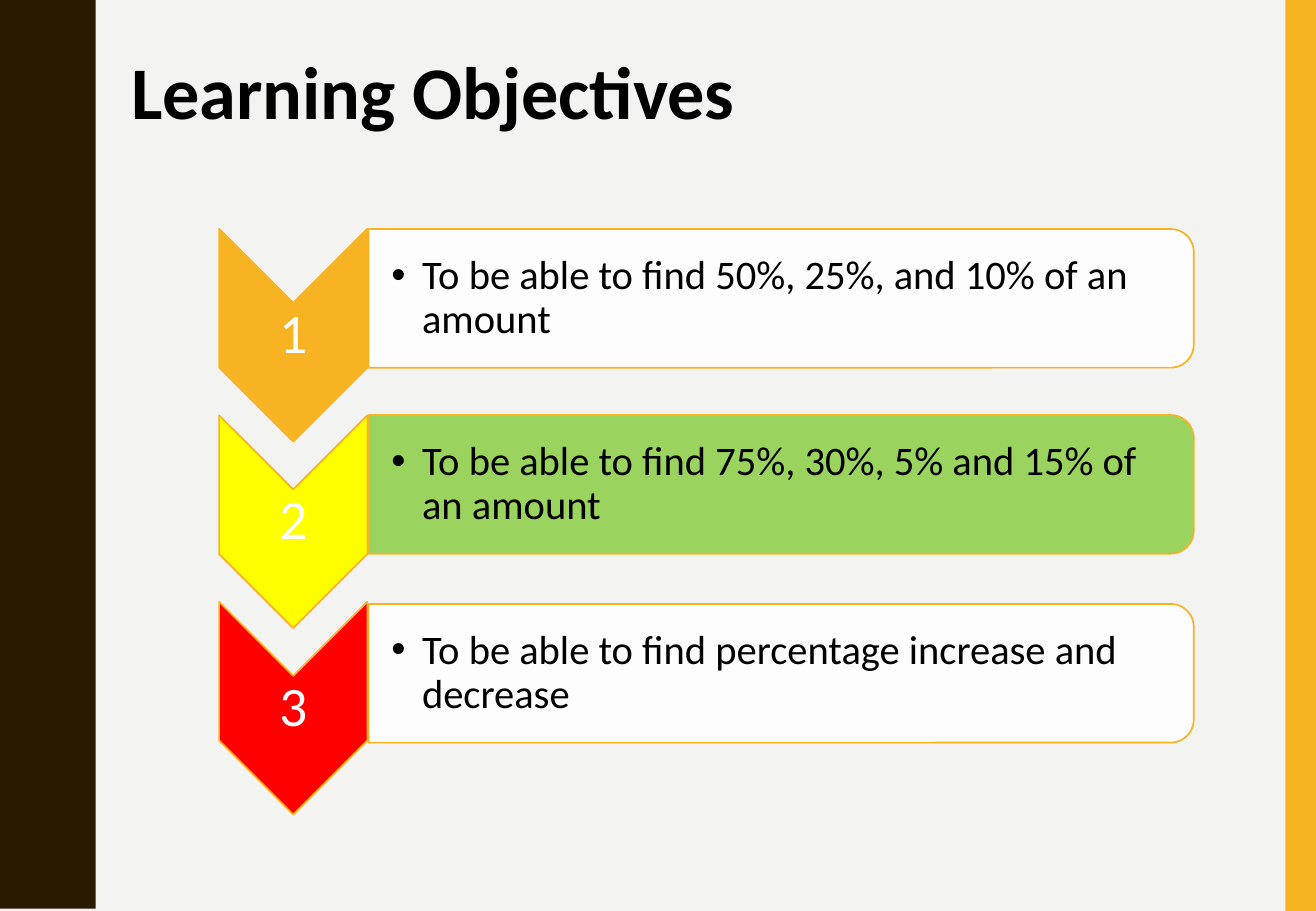
from lxml.etree import SubElement
from pptx import Presentation
from pptx.dml.color import RGBColor
from pptx.enum.shapes import MSO_SHAPE
from pptx.enum.text import MSO_ANCHOR, PP_ALIGN
from pptx.oxml.ns import qn
from pptx.util import Cm, Pt

TITLE = "Learning Objectives"
OBJECTIVES = [
    ("1", "To be able to find 50%, 25%, and 10% of an amount", "gold", "white", 6.24),
    ("2", "To be able to find 75%, 30%, 5% and 15% of an amount", "yellow", "green", 10.13),
    ("3", "To be able to find percentage increase and decrease", "red", "white", 14.08),
]
COLORS = {
    "paper": "F3F3F2", "brown": "2A1A00", "gold": "F8B323", "yellow": "FFFF00",
    "red": "FF0000", "green": "92D050", "white": "FFFFFF", "black": "000000",
}
FONT = "Calibri"
WIDTH, HEIGHT = 27.51, 19.05
STRIPE = 0.64
WAVE_STEP, WAVES = 3.81, 5
WAVE = [(1.6, 0), (1.6, 0.18), (1.63, 0.36), (1.65, 0.51), (1.68, 0.64),
        (1.73, 0.74), (1.75, 0.84), (1.8, 0.97), (1.85, 1.07), (1.88, 1.17),
        (1.91, 1.27), (1.96, 1.4), (1.98, 1.55), (1.98, 1.73), (2, 1.9)]
CHEVRON_X, CHEVRON_Y, CHEVRON_STEP = 6.13, 7.01, 3.9
CHEVRON_LONG, CHEVRON_WIDE = 4.45, 3.1
BAR_X, BAR_LONG, BAR_HIGH = 16.33, 17.25, 2.9


def rgb(name):
    return RGBColor.from_string(COLORS[name])


def paint(sp, fill, line=None, alpha=None):
    sp.shadow.inherit = False
    sp.fill.solid()
    sp.fill.fore_color.rgb = rgb(fill)
    if alpha:
        clr = sp.fill._xPr.find(qn("a:solidFill"))[0]
        SubElement(clr, qn("a:alpha"), val=str(alpha * 1000))
    if line:
        sp.line.color.rgb = rgb(line)
        sp.line.width = Pt(1)
    else:
        sp.line.fill.background()


def add_turned(s, kind, cx, cy, w, h, **look):
    sp = s.shapes.add_shape(kind, Cm(cx - w / 2), Cm(cy - h / 2), Cm(w), Cm(h))
    sp.rotation = 90
    paint(sp, **look)
    return sp


def add_text(s, text, x, y, w, h, size, color="black", bold=False, align=PP_ALIGN.LEFT,
             anchor=MSO_ANCHOR.MIDDLE, inset=(0.05, 0.05), spacing=0.9, bullet=False):
    tf = s.shapes.add_textbox(Cm(x), Cm(y), Cm(w), Cm(h)).text_frame
    tf.word_wrap = True
    tf.vertical_anchor = anchor
    tf.margin_left, tf.margin_top = Cm(inset[0]), Cm(inset[1])
    tf.margin_right, tf.margin_bottom = Cm(0.05), Cm(inset[1])
    p = tf.paragraphs[0]
    p.alignment, p.line_spacing = align, spacing
    r = p.add_run()
    r.text = text
    r.font.name, r.font.size, r.font.bold = FONT, Pt(size), bold
    r.font.color.rgb = rgb(color)
    if bullet:
        pPr = p._p.get_or_add_pPr()
        pPr.set("marL", str(Cm(0.64)))
        pPr.set("indent", str(-Cm(0.64)))
        SubElement(pPr, qn("a:buFont"), typeface="Arial")
        SubElement(pPr, qn("a:buChar"), char="•")


def add_frame(s):
    half = WAVE + [(x, WAVE_STEP - y) for x, y in WAVE[-2::-1]]
    edge = [(x, y + i * WAVE_STEP) for i in range(WAVES) for x, y in half]
    fb = s.shapes.build_freeform(0, 0, scale=Cm(1))
    fb.add_line_segments(edge + [(0, HEIGHT)], close=True)
    paint(fb.convert_to_shape(), "brown")
    stripe = s.shapes.add_shape(MSO_SHAPE.RECTANGLE, Cm(WIDTH - STRIPE), 0,
                                Cm(STRIPE), Cm(HEIGHT))
    paint(stripe, "gold")


def add_objective(s, i, number, text, chevron_fill, bar_fill, bar_y):
    cy = CHEVRON_Y + i * CHEVRON_STEP
    add_turned(s, MSO_SHAPE.CHEVRON, CHEVRON_X, cy, CHEVRON_LONG, CHEVRON_WIDE,
               fill=chevron_fill, line="gold")
    add_text(s, number, CHEVRON_X - CHEVRON_WIDE / 2, cy - 0.66, CHEVRON_WIDE, 1.32,
             33, color="white", align=PP_ALIGN.CENTER)
    add_turned(s, MSO_SHAPE.ROUND_2_SAME_RECTANGLE, BAR_X, bar_y, BAR_HIGH, BAR_LONG,
               fill=bar_fill, line="gold", alpha=90)
    add_text(s, text, BAR_X - BAR_LONG / 2, bar_y - 1.31, 17.12, 2.62, 24,
             inset=(0.48, 0.05), bullet=True)


def main():
    """Build the learning objectives slide."""
    prs = Presentation()
    prs.slide_width, prs.slide_height = Cm(WIDTH), Cm(HEIGHT)
    s = prs.slides.add_slide(prs.slide_layouts[6])
    s.background.fill.solid()
    s.background.fill.fore_color.rgb = rgb("paper")
    add_frame(s)
    for i, objective in enumerate(OBJECTIVES):
        add_objective(s, i, *objective)
    add_text(s, TITLE, 2.49, 0.81, 20.5, 2.13, 44, bold=True, anchor=MSO_ANCHOR.TOP,
             inset=(0.25, 0.13), spacing=1)
    prs.save("out.pptx")


if __name__ == "__main__":
    main()
